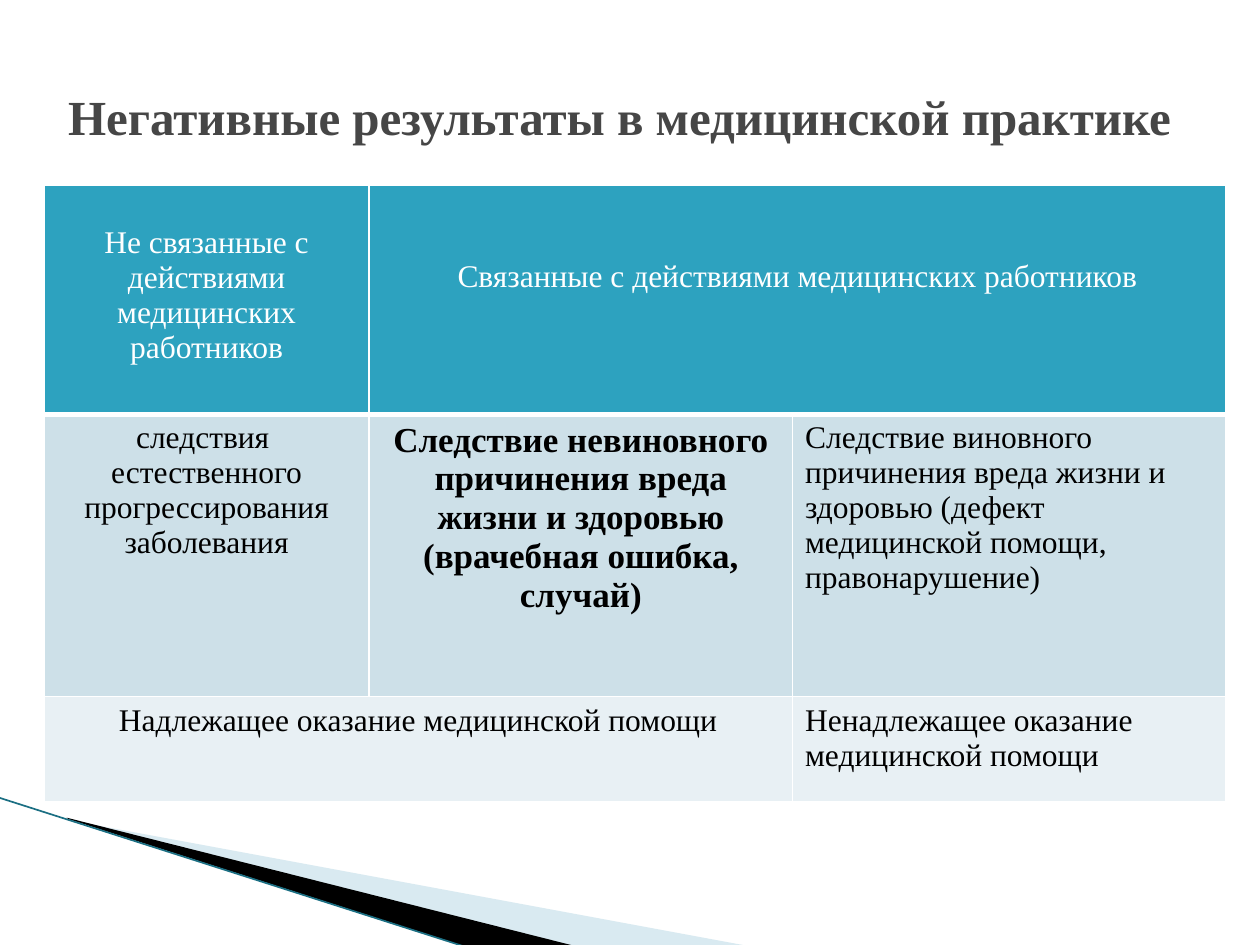
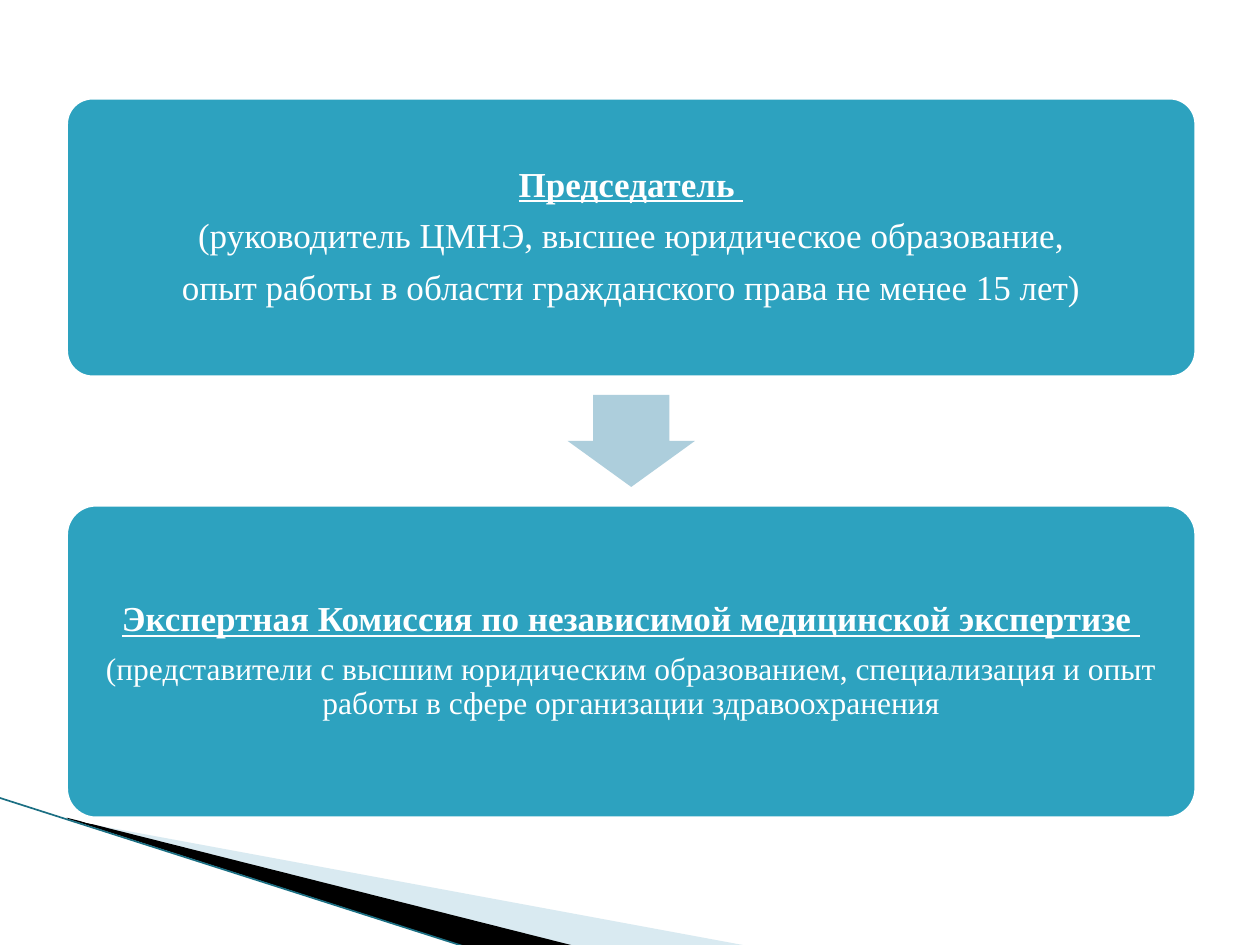
from lxml.etree import SubElement as Sub
from pptx import Presentation
from pptx.dml.color import RGBColor
from pptx.enum.shapes import MSO_CONNECTOR as Link, MSO_SHAPE as Form
from pptx.enum.text import MSO_ANCHOR as Anchor, PP_ALIGN as Align
from pptx.oxml.ns import qn
from pptx.util import Emu, Inches, Pt

COLS, ROWS = 100, 75
UNIT = Inches(0.1)
FONT = "Times New Roman"
TEAL, PALE, MIST, SKY = "2DA2BF", "CDE0E8", "E8F0F4", "ADCEDC"
WHITE, BLACK, GRAY, EDGE, WEDGE = "FFFFFF", "000000", "464646", "1B6F83", "A0CBDC"


def grid(*cells):
    return [Emu(round(n * UNIT)) for n in cells]


def tint(code):
    return RGBColor.from_string(code)


def paint(part, code):
    part.fill.solid()
    part.fill.fore_color.rgb = tint(code)


def write(frame, text, size=18, color=BLACK, bold=False, under=False,
          align=Align.CENTER, lead=None, after=None, more=False):
    para = frame.add_paragraph() if more else frame.paragraphs[0]
    para.alignment = align
    if lead:
        para.line_spacing = lead
    if after:
        para.space_after = Pt(after)
    run = para.add_run()
    run.text = text
    font = run.font
    font.name, font.size, font.bold, font.underline = FONT, Pt(size), bold, under
    font.color.rgb = tint(color)


def plain(shape, fill, line=None, width=0):
    shape.shadow.inherit = False
    paint(shape, fill)
    if line:
        shape.line.color.rgb = tint(line)
        shape.line.width = Pt(width)
    else:
        shape.line.fill.background()
    return shape


def wedge(slide, points, fill):
    path = slide.shapes.build_freeform(*points[0], scale=Inches(0.01))
    path.add_line_segments(points[1:])
    return plain(path.convert_to_shape(), fill)


def corner(slide):
    pale = wedge(slide, [(55, 651), (595, 751), (456, 751), (55, 650)], WEDGE)
    shade = pale._element.spPr.find(qn("a:solidFill"))[0]
    Sub(shade, qn("a:alpha"), val="40000")
    wedge(slide, [(53, 649), (457, 751), (372, 752), (54, 650)], BLACK)
    line = slide.shapes.add_connector(Link.STRAIGHT, *grid(-0.1, 63.3, 37.1, 75.2))
    line.line.color.rgb = tint(EDGE)
    line.line.width = Pt(0.95)
    Sub(line._element.spPr, qn("a:effectLst"))


def title(slide, box, text):
    frame = slide.shapes.add_textbox(*grid(*box)).text_frame
    frame.word_wrap = True
    frame.vertical_anchor = Anchor.MIDDLE
    write(frame, text, size=28, color=GRAY, bold=True)


def border(cell, base):
    props = cell._tc.get_or_add_tcPr()
    sides = zip("LRTB", (1, 1, 1, base))
    for spot, (side, width) in enumerate(sides):
        edge = props.makeelement(qn(f"a:ln{side}"), {"w": str(Pt(width))})
        Sub(Sub(edge, qn("a:solidFill")), qn("a:srgbClr"), val=WHITE)
        props.insert(spot, edge)


def matrix(slide, box, wide, tall, fills, items, spans):
    table = slide.shapes.add_table(len(tall), len(wide), *grid(*box)).table
    table.first_row = table.horz_banding = False
    for col, width in zip(table.columns, grid(*wide)):
        col.width = width
    for row, height in zip(table.rows, grid(*tall)):
        row.height = height
    for r, fill in enumerate(fills):
        for c in range(len(wide)):
            cell = table.cell(r, c)
            paint(cell, fill)
            border(cell, 1 if r else 3)
    for start, end in spans:
        table.cell(*start).merge(table.cell(*end))
    for spot, lines, skip, style in items:
        cell = table.cell(*spot)
        cell.margin_top = Inches(0.05 + 0.27 * skip)
        for i, text in enumerate(lines):
            write(cell.text_frame, text, more=i > 0, **style)


def card(slide, box, lines):
    shape = plain(slide.shapes.add_shape(Form.ROUNDED_RECTANGLE, *grid(*box)),
                  TEAL, WHITE, 4.33)
    shape.adjustments[0] = 0.1
    frame = shape.text_frame
    frame.word_wrap = True
    frame.vertical_anchor = Anchor.MIDDLE
    frame.margin_left = frame.margin_right = Inches(0.08)
    frame.margin_top = frame.margin_bottom = Inches(0.08)
    for i, (text, size) in enumerate(lines):
        write(frame, text, size=size, color=WHITE, bold=i == 0, under=i == 0,
              lead=0.9, after=8, more=i > 0)


def flow(slide, box, cards, gap):
    left, top, width, _ = box
    for i, (height, lines) in enumerate(cards):
        if i:
            wide, tall = 10.1, 7.3
            arrow = slide.shapes.add_shape(Form.DOWN_ARROW, *grid(
                left + (width - wide) / 2, top - (gap + tall) / 2, wide, tall))
            plain(arrow, SKY)
            arrow.adjustments[0], arrow.adjustments[1] = 0.6, 0.5
        card(slide, (left, top, width, height), lines)
        top += height + gap


def results(slide):
    corner(slide)
    title(slide, (2, 2.1, 95.3, 14.2), "Негативные результаты в медицинской практике ")
    head, side = {"color": WHITE}, {"align": Align.LEFT}
    items = [
        ((0, 0), ["Не связанные с действиями медицинских работников"], 1, head),
        ((0, 1), ["Связанные с действиями медицинских работников"], 2, head),
        ((1, 0), ["следствия ", "естественного прогрессирования заболевания"], 0, {}),
        ((1, 1), ["Следствие невиновного причинения вреда жизни и здоровью "
                  "(врачебная ошибка, случай)"], 0, {"size": 20, "bold": True}),
        ((1, 2), ["Следствие виновного причинения вреда жизни и здоровью "
                  "(дефект медицинской помощи, правонарушение)"], 0, side),
        ((2, 0), ["Надлежащее оказание медицинской помощи"], 0, {}),
        ((2, 2), ["Ненадлежащее оказание медицинской помощи"], 0, side),
    ]
    matrix(slide, (3.5, 14.7, 93.7, 48.8), (25.8, 33.6, 34.4), (18.2, 22.4, 8.3),
           (TEAL, PALE, MIST), items, [((0, 1), (0, 2)), ((2, 0), (2, 1))])


def panel(slide):
    corner(slide)
    flow(slide, (5.1, 7.6, 90, 57.5), [
        (22.5, [("Председатель ", 20),
                ("(руководитель ЦМНЭ, высшее юридическое образование,", 20),
                ("опыт работы в области гражданского права не менее 15 лет)", 20)]),
        (25.2, [("Экспертная Комиссия по независимой медицинской экспертизе ", 20),
                ("(представители с высшим юридическим образованием, специализация "
                 "и опыт работы в сфере организации здравоохранения", 18)]),
    ], gap=9.8)


def main():
    deck = Presentation()
    deck.slide_width, deck.slide_height = grid(COLS, ROWS)
    for build in (results, panel):
        build(deck.slides.add_slide(deck.slide_layouts[6]))
    deck.save("out.pptx")


if __name__ == "__main__":
    main()
